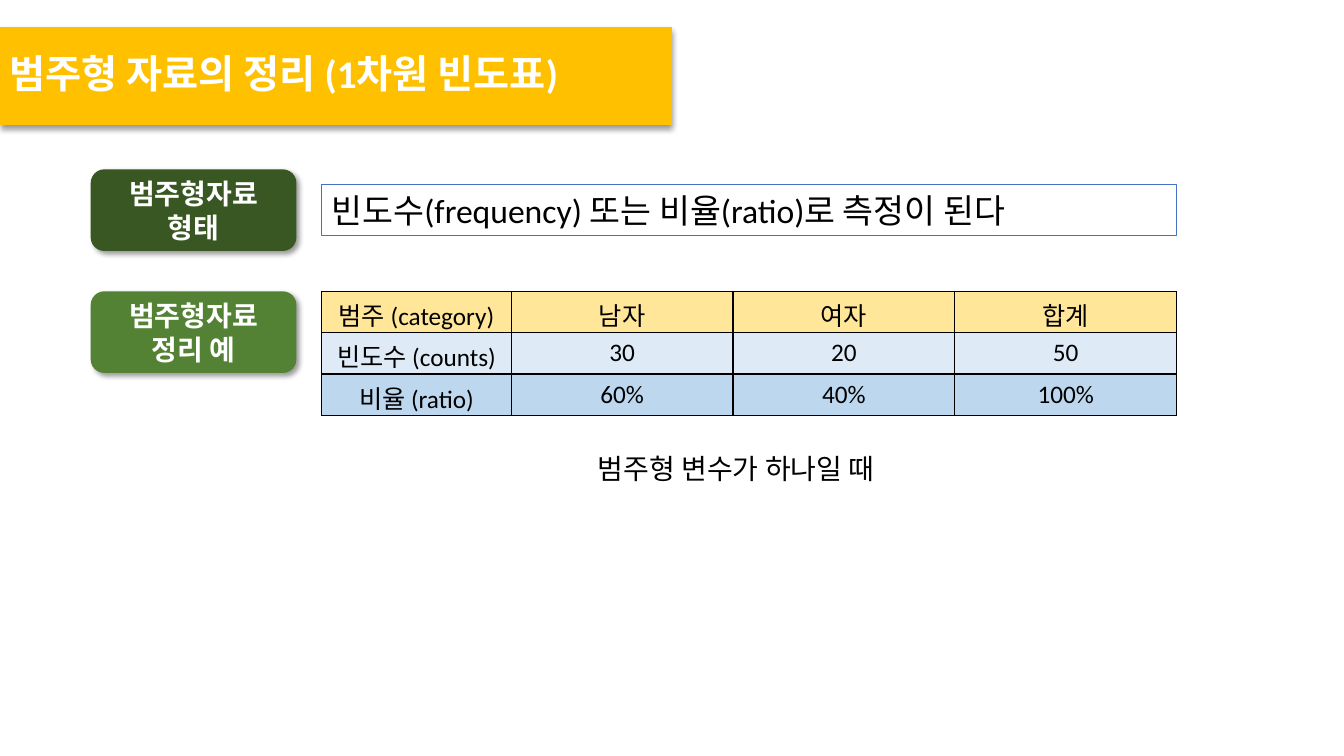
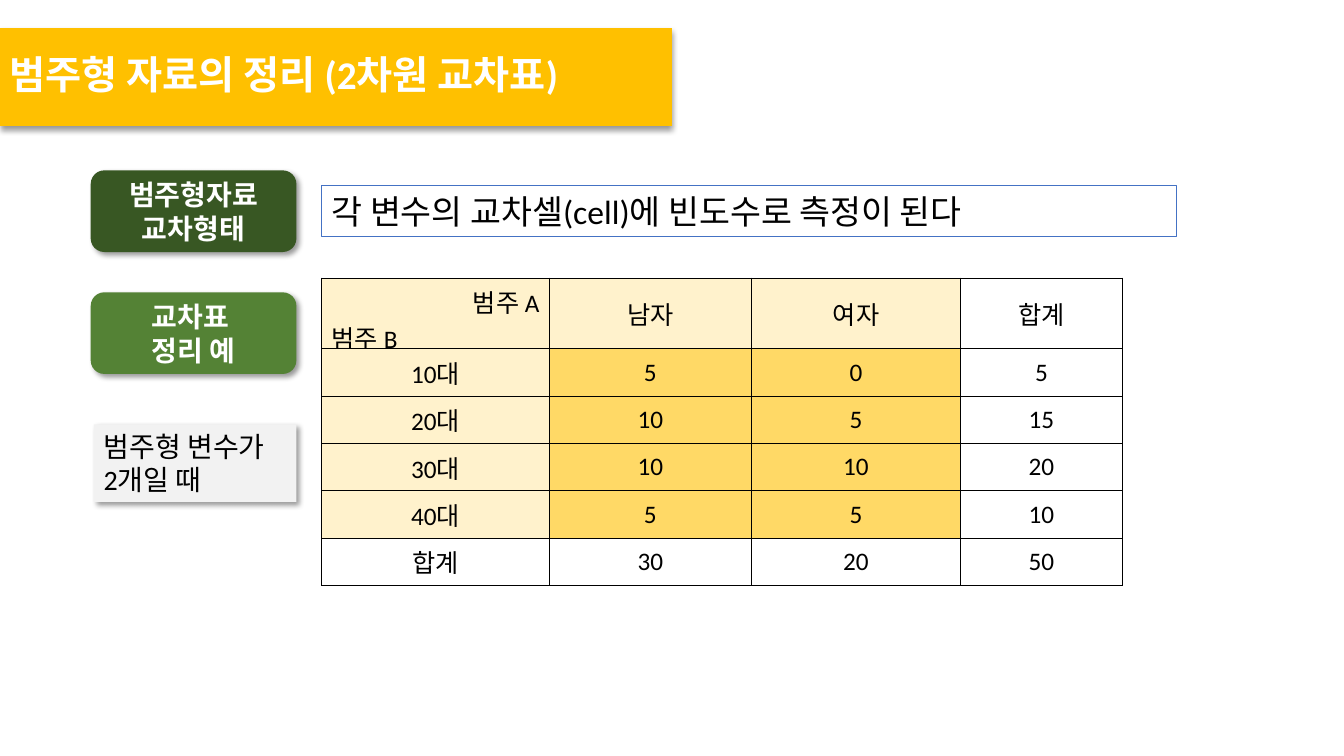
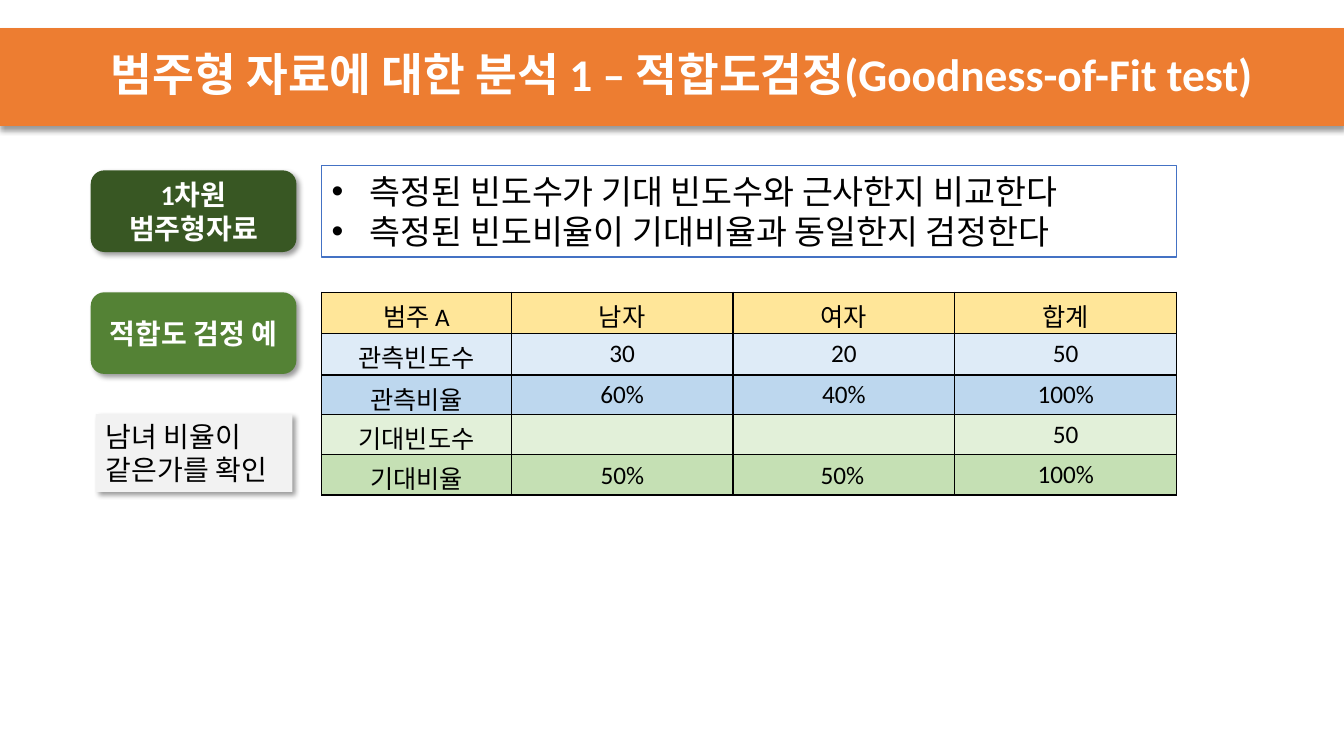
from lxml import etree
from pptx import Presentation
from pptx.dml.color import RGBColor
from pptx.enum.shapes import MSO_SHAPE
from pptx.enum.text import MSO_ANCHOR, MSO_AUTO_SIZE, PP_ALIGN
from pptx.oxml.ns import qn
from pptx.util import Inches, Pt

RECT, ROUND = MSO_SHAPE.RECTANGLE, MSO_SHAPE.ROUNDED_RECTANGLE
LEFT, MID, RIGHT = PP_ALIGN.LEFT, PP_ALIGN.CENTER, PP_ALIGN.RIGHT
TOP, CENTRE = MSO_ANCHOR.TOP, MSO_ANCHOR.MIDDLE
FIT = MSO_AUTO_SIZE.SHAPE_TO_FIT_TEXT

FONT = "Calibri"
BLACK, WHITE, BLUE = "000000", "FFFFFF", "4472C4"
GOLD, ORANGE, GREY = "FFC000", "ED7D31", "F2F2F2"
LABELS = ["385723", "548235"]
CREAM, AMBER, SAND = "FFF2CC", "FFD966", "FFE699"
PALE, SKY, MINT, LEAF = "DEEBF7", "BDD7EE", "E2F0D9", "C5E0B4"

WIDE, HIGH = 13.33, 7.5
BAND = 0.97
LABEL_X, LABEL_W, LABEL_H = 0.9, 2.04, 0.81
LABEL_Y, LABEL_STEP = 1.41, 1.21    # measured from the top of the band
BODY_X, BODY_W = 3.19, 8.48
COLS = [1.88, 2.2, 2.2, 2.2]

HEAD = ["남자", "여자", "합계"]
COUNTS, RATES = ["30", "20", "50"], ["60%", "40%", "100%"]

# table: (y, column widths, row heights, cell anchor, rows, row fills)
SLIDES = [
    {
        "top": 0.27,
        "title": "범주형 자료의 정리 (1차원 빈도표)",
        "band": (WIDE / 2, GOLD, 28, 0.1),
        "labels": [["범주형자료", "형태"], ["범주형자료", "정리 예"]],
        "panel": (0.5, ["빈도수(frequency) 또는 비율(ratio)로 측정이 된다"], False),
        "tables": [(2.89, COLS, [0.41] * 3, TOP,
                    [["범주 (category)"] + HEAD,
                     ["빈도수 (counts)"] + COUNTS,
                     ["비율 (ratio)"] + RATES],
                    [[SAND] * 4, [PALE] * 4, [SKY] * 4])],
        "texts": [(5.83, 4.43, 3.2, 0.44, ["범주형 변수가 하나일 때"], 20, None)],
    },
    {
        "top": 0.28,
        "title": "범주형 자료의 정리 (2차원 교차표)",
        "band": (WIDE / 2, GOLD, 28, 0.1),
        "labels": [["범주형자료", "교차형태"], ["교차표 ", "정리 예"]],
        "panel": (0.5, ["각 변수의 교차셀(cell)에 빈도수로 측정이 된다"], False),
        "tables": [(2.76, [2.26, 2, 2.08, 1.6], [0.7] + [0.47] * 5, CENTRE,
                    [[("범주 A", "범주 B")] + HEAD,
                     ["10대", "5", "0", "5"],
                     ["20대", "10", "5", "15"],
                     ["30대", "10", "10", "20"],
                     ["40대", "5", "5", "10"],
                     ["합계"] + COUNTS],
                    [[CREAM] * 3 + [None]]
                    + [[CREAM, AMBER, AMBER, None]] * 4 + [[None] * 4])],
        "texts": [(0.93, 4.21, 2.01, 0.77, ["범주형 변수가", "2개일 때"], 20, GREY)],
    },
    {
        "top": 0.28,
        "title": "범주형 자료에 대한 분석 1 – 적합도검정(Goodness-of-Fit test)",
        "band": (WIDE, ORANGE, 32.4, 1.1),
        "labels": [["1차원", "범주형자료"], ["적합도 검정 예"]],
        "panel": (0.91, ["측정된 빈도수가 기대 빈도수와 근사한지 비교한다",
                         "측정된 빈도비율이 기대비율과 동일한지 검정한다"], True),
        "tables": [(2.9, COLS, [0.41, 0.41, 0.4], TOP,
                    [["범주 A"] + HEAD,
                     ["관측빈도수"] + COUNTS,
                     ["관측비율"] + RATES],
                    [[SAND] * 4, [PALE] * 4, [SKY] * 4]),
                   (4.11, COLS, [0.4, 0.4], TOP,
                    [["기대빈도수", "", "", "50"],
                     ["기대비율", "", "", "100%"]],
                    [[MINT] * 4, [LEAF] * 4])],
        "texts": [(5.86, 4.51, 0.64, 0.4, ["50%"], 18, None),
                  (8.04, 4.51, 0.64, 0.4, ["50%"], 18, None),
                  (0.95, 4.11, 1.95, 0.77, ["남녀 비율이", "같은가를 확인"], 20, GREY)],
    },
]


def rgb(code):
    return RGBColor.from_string(code)


def node(up, tag, **attrs):
    return etree.SubElement(up, qn(tag), {k: str(v) for k, v in attrs.items()})


def paint(thing, color):
    if color:
        thing.fill.solid()
        thing.fill.fore_color.rgb = rgb(color)
    else:
        thing.fill.background()


def write(frame, lines, size, color=BLACK, bold=False, aligns=(LEFT,)):
    """One paragraph a line; the last alignment holds for the rest."""
    for i, line in enumerate(lines):
        para = frame.paragraphs[0] if i == 0 else frame.add_paragraph()
        para.alignment = aligns[min(i, len(aligns) - 1)]
        run = para.add_run()
        run.text = line
        font = run.font
        font.name, font.size, font.bold = FONT, Pt(size), bold
        font.color.rgb = rgb(color)


def shade(shape, angle):
    effects = node(shape.fill._xPr, "a:effectLst")
    outer = node(effects, "a:outerShdw", blurRad=Pt(4), dist=Pt(3),
                 dir=angle * 60000, algn="tl", rotWithShape=0)
    node(node(outer, "a:srgbClr", val=BLACK), "a:alpha", val=40000)


def box(slide, kind, x, y, w, h, fill=None, line=None, angle=None):
    shape = slide.shapes.add_shape(kind, *map(Inches, (x, y, w, h)))
    paint(shape, fill)
    if line:
        shape.line.color.rgb = rgb(line)
        shape.line.width = Pt(0.75)
    else:
        shape.line.fill.background()
    if angle is None:
        shape.shadow.inherit = False
    else:
        shade(shape, angle)
    frame = shape.text_frame
    frame.word_wrap = True
    frame.vertical_anchor = CENTRE
    return frame


def add_title(slide, top, text, wide, fill, size, inset):
    frame = box(slide, RECT, 0, top, wide, BAND, fill, angle=90)
    frame.margin_left = Inches(inset)
    write(frame, [text], size, WHITE, True)
    frame.paragraphs[0].line_spacing = 0.9


def add_labels(slide, top, labels):
    for i, lines in enumerate(labels):
        y = top + LABEL_Y + i * LABEL_STEP
        frame = box(slide, ROUND, LABEL_X, y, LABEL_W, LABEL_H, LABELS[i], angle=45)
        write(frame, lines, 20, WHITE, True, (MID,))


def add_panel(slide, top, high, lines, dots):
    """Outlined box, level with the middle of the first label."""
    y = top + LABEL_Y + (LABEL_H - high) / 2
    frame = box(slide, RECT, BODY_X, y, BODY_W, high, line=BLUE)
    frame.auto_size = FIT
    write(frame, lines, 24)
    if dots:
        for para in frame.paragraphs:
            props = para._p.get_or_add_pPr()
            props.set("marL", str(Inches(0.38)))
            props.set("indent", str(-Inches(0.38)))
            node(props, "a:buFont", typeface="Arial")
            node(props, "a:buChar", char="•")


def edge(cell):
    props = cell._tc.get_or_add_tcPr()
    for i, side in enumerate(("a:lnL", "a:lnR", "a:lnT", "a:lnB")):
        line = etree.Element(qn(side), w=str(Pt(1)))
        node(node(line, "a:solidFill"), "a:srgbClr", val=BLACK)
        props.insert(i, line)


def add_table(slide, y, cols, highs, anchor, rows, fills):
    spot = map(Inches, (BODY_X, y, sum(cols), sum(highs)))
    table = slide.shapes.add_table(len(rows), len(cols), *spot).table
    table.first_row = table.horz_banding = False
    for col, wide in zip(table.columns, cols):
        col.width = Inches(wide)
    for r, row in enumerate(rows):
        table.rows[r].height = Inches(highs[r])
        for c, text in enumerate(row):
            cell = table.cell(r, c)
            cell.vertical_anchor = anchor
            paint(cell, fills[r][c])
            edge(cell)
            if isinstance(text, tuple):
                write(cell.text_frame, text, 18, aligns=(RIGHT, LEFT))
            else:
                write(cell.text_frame, [text], 18, aligns=(MID,))


def add_text(slide, x, y, w, h, lines, size, fill):
    if fill:
        frame = box(slide, RECT, x, y, w, h, fill, angle=45)
    else:
        frame = slide.shapes.add_textbox(*map(Inches, (x, y, w, h))).text_frame
    frame.vertical_anchor = TOP
    frame.word_wrap = False
    frame.auto_size = FIT
    write(frame, lines, size)


def main():
    deck = Presentation()
    deck.slide_width, deck.slide_height = Inches(WIDE), Inches(HIGH)
    for page in SLIDES:
        slide = deck.slides.add_slide(deck.slide_layouts[6])
        top = page["top"]
        add_title(slide, top, page["title"], *page["band"])
        add_labels(slide, top, page["labels"])
        add_panel(slide, top, *page["panel"])
        for table in page["tables"]:
            add_table(slide, *table)
        for text in page["texts"]:
            add_text(slide, *text)
    deck.save("out.pptx")


if __name__ == "__main__":
    main()
